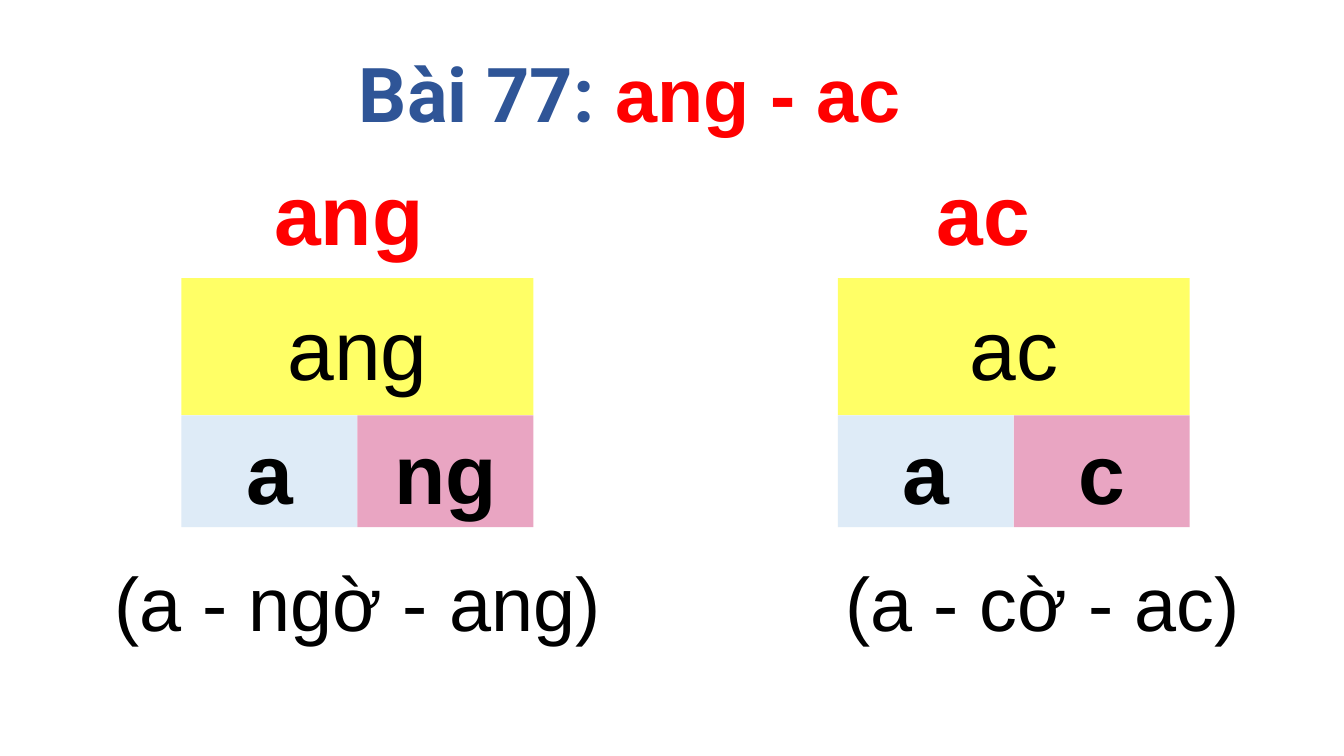
from dataclasses import dataclass

from pptx import Presentation
from pptx.dml.color import RGBColor
from pptx.enum.shapes import MSO_SHAPE
from pptx.enum.text import MSO_ANCHOR, MSO_AUTO_SIZE, PP_ALIGN
from pptx.util import Inches, Pt

RECTANGLE = MSO_SHAPE.RECTANGLE
MIDDLE = MSO_ANCHOR.MIDDLE
GROW = MSO_AUTO_SIZE.SHAPE_TO_FIT_TEXT
LEFT, CENTER = PP_ALIGN.LEFT, PP_ALIGN.CENTER


@dataclass(frozen=True)
class Theme:
    black: RGBColor = RGBColor.from_string("000000")
    red: RGBColor = RGBColor.from_string("FF0000")
    blue: RGBColor = RGBColor.from_string("2F5597")
    yellow: RGBColor = RGBColor.from_string("FFFF66")
    pale_blue: RGBColor = RGBColor.from_string("DEEBF7")
    pink: RGBColor = RGBColor.from_string("E9A5C2")
    font: str = "Arial"
    title_font: str = "Roboto"
    large: Pt = Pt(60)
    medium: Pt = Pt(54)


theme = Theme()


def write(box, text, size, color, bold, align):
    box.text_frame.word_wrap = True
    para = box.text_frame.paragraphs[0]
    para.text = text
    para.alignment = align
    para.font.name = theme.font
    para.font.size = size
    para.font.bold = bold
    para.font.color.rgb = color


def add_label(left, top, width, height, text, size, color, bold, align):
    box = page.shapes.add_textbox(Inches(left), Inches(top), Inches(width), Inches(height))
    write(box, text, size, color, bold, align)
    box.text_frame.auto_size = GROW


deck = Presentation()
deck.slide_width, deck.slide_height = Inches(13.33), Inches(7.5)
page = deck.slides.add_slide(deck.slide_layouts[6])

block_width = 3.49
half = block_width / 2
rhymes = [
    ("ac", "c", "(a - cờ - ac)", 8.31, 9.19, 1.85, 7.45, 5.78),
    ("ang", "ng", "(a - ngờ - ang)", 1.8, 2.62, 2.04, 0.46, 6.17),
]

for rhyme, ending, spelling, block_left, head_left, head_width, spell_left, spell_width in rhymes:
    add_label(head_left, 1.55, head_width, 1.11, rhyme, theme.large, theme.red, True, LEFT)

    block = page.shapes.add_group_shape()
    tiles = [
        (rhyme, 0, 2.76, block_width, 1.36, theme.yellow, False),
        ("a", 0, 4.12, half, 1.11, theme.pale_blue, True),
        (ending, half, 4.12, half, 1.11, theme.pink, True),
    ]
    for text, offset, top, width, height, fill, bold in tiles:
        tile = block.shapes.add_shape(
            RECTANGLE, Inches(block_left + offset), Inches(top), Inches(width), Inches(height)
        )
        tile.shadow.inherit = False
        tile.fill.solid()
        tile.fill.fore_color.rgb = fill
        tile.line.fill.background()
        tile.text_frame.vertical_anchor = MIDDLE
        write(tile, text, theme.large, theme.black, bold, CENTER)

    add_label(spell_left, 5.47, spell_width, 1.01, spelling, theme.medium, theme.black, False, CENTER)

title = page.shapes.add_textbox(Inches(3.46), Inches(0.42), Inches(6.59), Inches(1.01))
title.text_frame.word_wrap = True
title.text_frame.auto_size = GROW
title_para = title.text_frame.paragraphs[0]
title_para.font.size = theme.medium
title_para.font.bold = True
for text, font, color in [
    ("Bài 77:", theme.title_font, theme.blue),
    (" ang - ac", theme.font, theme.red),
]:
    span = title_para.add_run()
    span.text = text
    span.font.name = font
    span.font.size = theme.medium
    span.font.bold = True
    span.font.color.rgb = color

deck.save("out.pptx")
